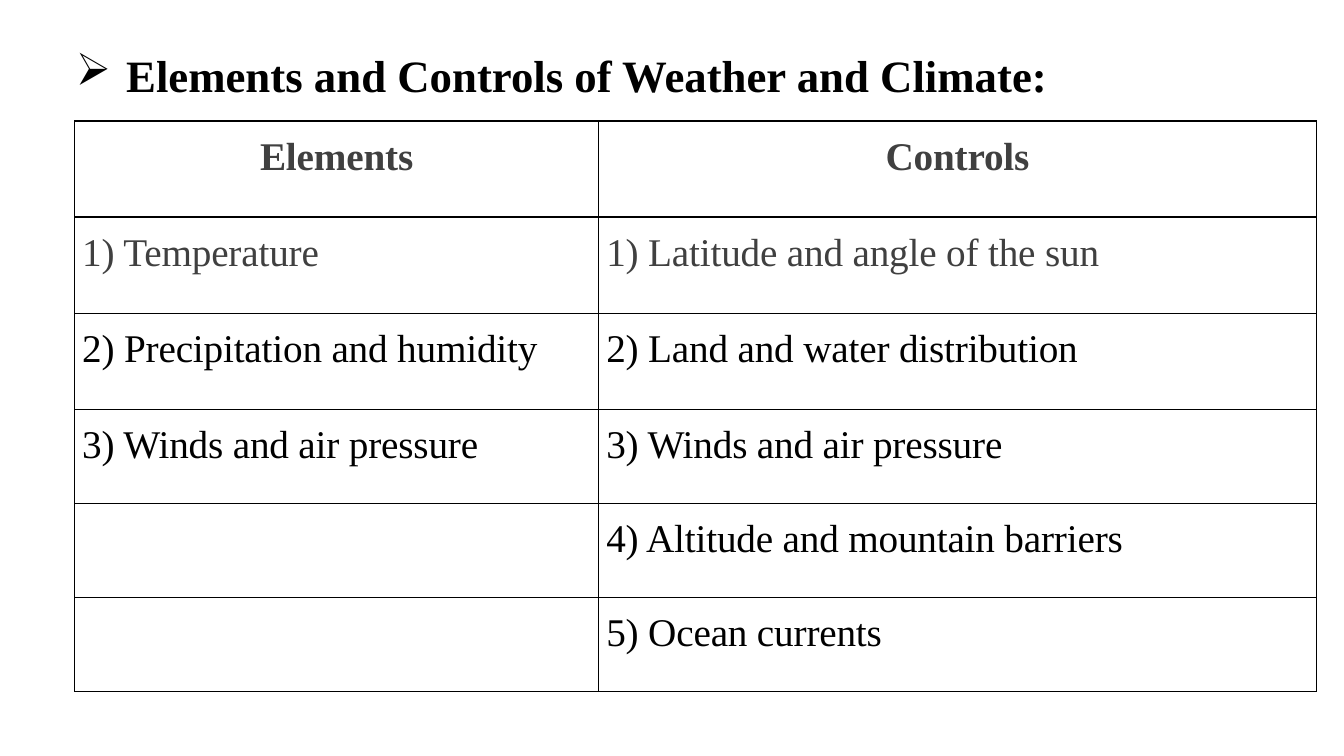
from lxml import etree
from pptx import Presentation
from pptx import util as u
from pptx.dml import color
from pptx.enum import text
from pptx.oxml import ns

FACE = "Times New Roman"
BLACK, GREY = "000000", "404040"
LEFT = u.Cm(1.88)
COLS = (13.21, 18.08)
ROWS = (2.42, 2.42, 2.42, 2.37, 2.37, 2.37)
HEADS = ("Elements", "Controls")
ITEMS = (
    ("Temperature", "Precipitation and humidity", "Winds and air pressure"),
    ("Latitude and angle of the sun", "Land and water distribution",
     "Winds and air pressure", "Altitude and mountain barriers",
     "Ocean currents"),
)


def rgb(code):
    return color.RGBColor.from_string(code)


def add(node, tag, **attrs):
    return etree.SubElement(node, ns.qn(tag), attrs)


def style(para, size, tint, bold, before):
    font = para.font
    font.name, font.size, font.bold = FACE, u.Pt(size), bold
    font.color.rgb = rgb(tint)
    para.space_before = u.Pt(before)


def indent(para, left, first=0):
    props = para._p.get_or_add_pPr()
    props.set("marL", str(u.Cm(left)))
    props.set("indent", str(u.Cm(first)))
    return props


def set_title(shape, words):
    shape.left, shape.top = LEFT, u.Cm(1.17)
    shape.width, shape.height = u.Cm(24.54), u.Cm(1.42)
    frame = shape.text_frame
    frame.text = words
    frame.margin_left = frame.margin_right = frame.margin_bottom = 0
    frame.margin_top = u.Cm(0.03)
    frame.vertical_anchor = text.MSO_ANCHOR.TOP
    frame.auto_size = text.MSO_AUTO_SIZE.SHAPE_TO_FIT_TEXT
    para = frame.paragraphs[0]
    para.alignment = text.PP_ALIGN.LEFT
    add(indent(para, 1.3, -1.27), "a:buChar", char="➢")
    style(para, 32, BLACK, True, 1.1)


def frame_cell(cell):
    cell.margin_left = cell.margin_right = cell.margin_bottom = 0
    cell.margin_top = u.Cm(0.36)
    # Borders come before the fill in the cell properties
    props = cell._tc.get_or_add_tcPr()
    for side in ("a:lnL", "a:lnR", "a:lnT", "a:lnB"):
        line = add(props, side, w=str(u.Pt(1)))
        add(add(line, "a:solidFill"), "a:srgbClr", val=BLACK)
    cell.fill.background()


def write(cell, words, tint, head=False):
    para = cell.text_frame.paragraphs[0]
    run = para.add_run()
    run.text = words
    run._r.get_or_add_rPr().set("spc", "-10")
    if head:
        para.alignment = text.PP_ALIGN.CENTER
    else:
        indent(para, 0.19)
    style(para, 28, tint, head, 9.8)


def add_grid(slide):
    grid = slide.shapes.add_table(
        len(ROWS), len(COLS), LEFT, u.Cm(3.05),
        u.Cm(sum(COLS)), u.Cm(sum(ROWS))).table
    grid.first_row = grid.horz_banding = False
    for col, width in zip(grid.columns, COLS):
        col.width = u.Cm(width)
    for row, height in zip(grid.rows, ROWS):
        row.height = u.Cm(height)
    for cell in grid.iter_cells():
        frame_cell(cell)
    for col, (head, items) in enumerate(zip(HEADS, ITEMS)):
        write(grid.cell(0, col), head, GREY, True)
        for row, item in enumerate(items, 1):
            tint = GREY if row == 1 else BLACK
            write(grid.cell(row, col), f"{row}) {item}", tint)


def main():
    deck = Presentation()
    deck.slide_width, deck.slide_height = u.Cm(33.87), u.Cm(19.05)
    slide = deck.slides.add_slide(deck.slide_layouts[5])
    # Heading
    set_title(slide.shapes.title,
              "Elements and Controls of Weather and Climate:")
    # Table of elements and controls
    add_grid(slide)
    deck.save("out.pptx")


if __name__ == "__main__":
    main()
